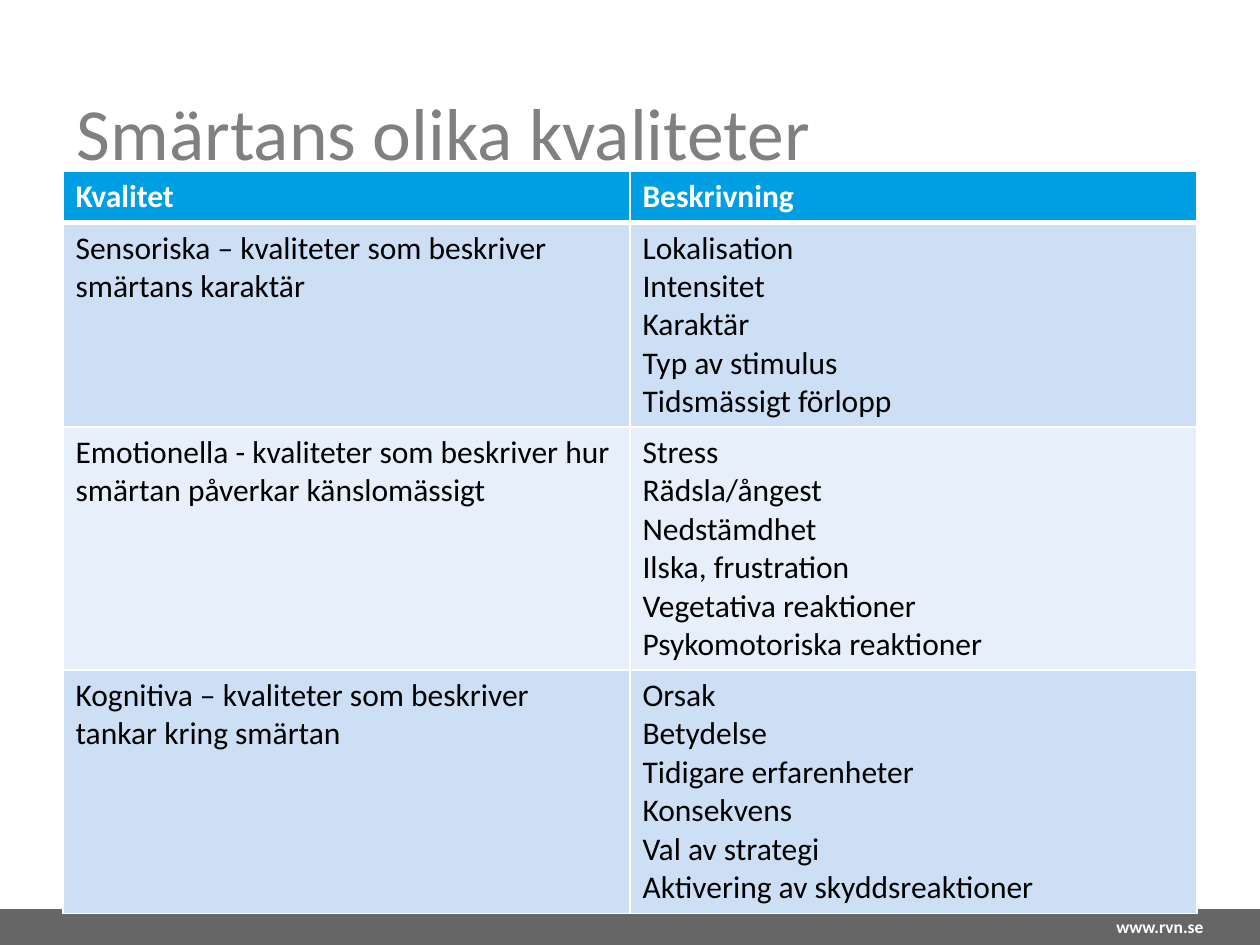
from dataclasses import dataclass

from lxml.etree import SubElement
from pptx import Presentation
from pptx.dml.color import RGBColor
from pptx.enum.shapes import MSO_SHAPE
from pptx.enum.text import MSO_ANCHOR, PP_ALIGN
from pptx.oxml.ns import qn
from pptx.util import Cm, Pt


@dataclass(frozen=True)
class Theme:
    font: str = "Calibri"
    white: str = "FFFFFF"
    black: str = "000000"
    title: str = "808080"
    footer: str = "666666"
    header: str = "009FE3"
    bands: tuple[str, str] = ("CCDFF4", "E7F0FA")
    title_size: int = 42
    table_size: int = 18
    footer_size: int = 10
    border: int = 1
    header_border: int = 3


@dataclass(frozen=True)
class Quality:
    name: str
    descriptions: tuple[str, ...]
    height: float


THEME = Theme()
HEADINGS = ("Kvalitet", "Beskrivning")
HEADER_HEIGHT = 1.04
COLUMN_WIDTH = 11.43
QUALITIES = (
    Quality(
        "Sensoriska – kvaliteter som beskriver smärtans karaktär",
        ("Lokalisation", "Intensitet", "Karaktär", "Typ av stimulus", "Tidsmässigt förlopp"),
        4.12,
    ),
    Quality(
        "Emotionella - kvaliteter som beskriver hur smärtan påverkar känslomässigt",
        ("Stress", "Rädsla/ångest", "Nedstämdhet", "Ilska, frustration",
         "Vegetativa reaktioner", "Psykomotoriska reaktioner"),
        4.9,
    ),
    Quality(
        "Kognitiva – kvaliteter som beskriver tankar kring smärtan",
        ("Orsak", "Betydelse", "Tidigare erfarenheter", "Konsekvens",
         "Val av strategi", "Aktivering av skyddsreaktioner"),
        4.9,
    ),
)


def write(tf, *lines: str, size: int, color: str, bold: bool = False,
          align=PP_ALIGN.LEFT, spacing=None) -> None:
    tf.word_wrap = True
    for i, line in enumerate(lines):
        p = tf.add_paragraph() if i else tf.paragraphs[0]
        p.alignment = align
        if spacing:
            p.line_spacing = spacing
        r = p.add_run()
        r.text = line
        r.font.name = THEME.font
        r.font.size = Pt(size)
        r.font.bold = bold
        r.font.color.rgb = RGBColor.from_string(color)


def set_borders(cell, top: int, bottom: int) -> None:
    tc_pr = cell._tc.get_or_add_tcPr()
    widths = {"L": THEME.border, "R": THEME.border, "T": top, "B": bottom}
    for side, width in widths.items():
        ln = SubElement(tc_pr, qn(f"a:ln{side}"), w=str(Pt(width)))
        fill = SubElement(ln, qn("a:solidFill"))
        SubElement(fill, qn("a:srgbClr"), val=THEME.white)


def fill_cell(cell, lines: tuple[str, ...], row: int) -> None:
    is_header = row == 0
    set_borders(
        cell,
        top=THEME.header_border if row == 1 else THEME.border,
        bottom=THEME.header_border if is_header else THEME.border,
    )
    color = THEME.header if is_header else THEME.bands[(row - 1) % 2]
    cell.fill.solid()
    cell.fill.fore_color.rgb = RGBColor.from_string(color)
    write(cell.text_frame, *lines, size=THEME.table_size, bold=is_header,
          color=THEME.white if is_header else THEME.black)


def add_footer(s) -> None:
    sp = s.shapes.add_shape(MSO_SHAPE.RECTANGLE, 0, Cm(18.33), Cm(25.4), Cm(0.72))
    sp.shadow.inherit = False
    sp.fill.solid()
    sp.fill.fore_color.rgb = RGBColor.from_string(THEME.footer)
    sp.line.fill.background()
    tf = s.shapes.add_textbox(Cm(22.1), Cm(18.33), Cm(2.41), Cm(0.68)).text_frame
    tf.vertical_anchor = MSO_ANCHOR.MIDDLE
    write(tf, "www.rvn.se", size=THEME.footer_size, color=THEME.white,
          bold=True, align=PP_ALIGN.RIGHT)


def add_title(s) -> None:
    tf = s.shapes.add_textbox(Cm(1.3), Cm(1.32), Cm(22.86), Cm(2.21)).text_frame
    tf.vertical_anchor = MSO_ANCHOR.BOTTOM
    tf.margin_bottom = 0
    write(tf, "Smärtans olika kvaliteter", size=THEME.title_size,
          color=THEME.title, spacing=Pt(THEME.title_size))


def add_quality_table(s) -> None:
    heights = [HEADER_HEIGHT, *(q.height for q in QUALITIES)]
    rows = [tuple((h,) for h in HEADINGS),
            *(((q.name,), q.descriptions) for q in QUALITIES)]
    table = s.shapes.add_table(
        len(rows), len(HEADINGS), Cm(1.27), Cm(3.45),
        Cm(COLUMN_WIDTH * len(HEADINGS)), Cm(sum(heights)),
    ).table
    for column in table.columns:
        column.width = Cm(COLUMN_WIDTH)
    for i, (height, row) in enumerate(zip(heights, rows)):
        table.rows[i].height = Cm(height)
        for j, lines in enumerate(row):
            fill_cell(table.cell(i, j), lines, i)


def main() -> None:
    prs = Presentation()
    prs.slide_width, prs.slide_height = Cm(25.4), Cm(19.05)
    s = prs.slides.add_slide(prs.slide_layouts[6])
    add_footer(s)
    add_title(s)
    add_quality_table(s)
    prs.save("out.pptx")


if __name__ == "__main__":
    main()
